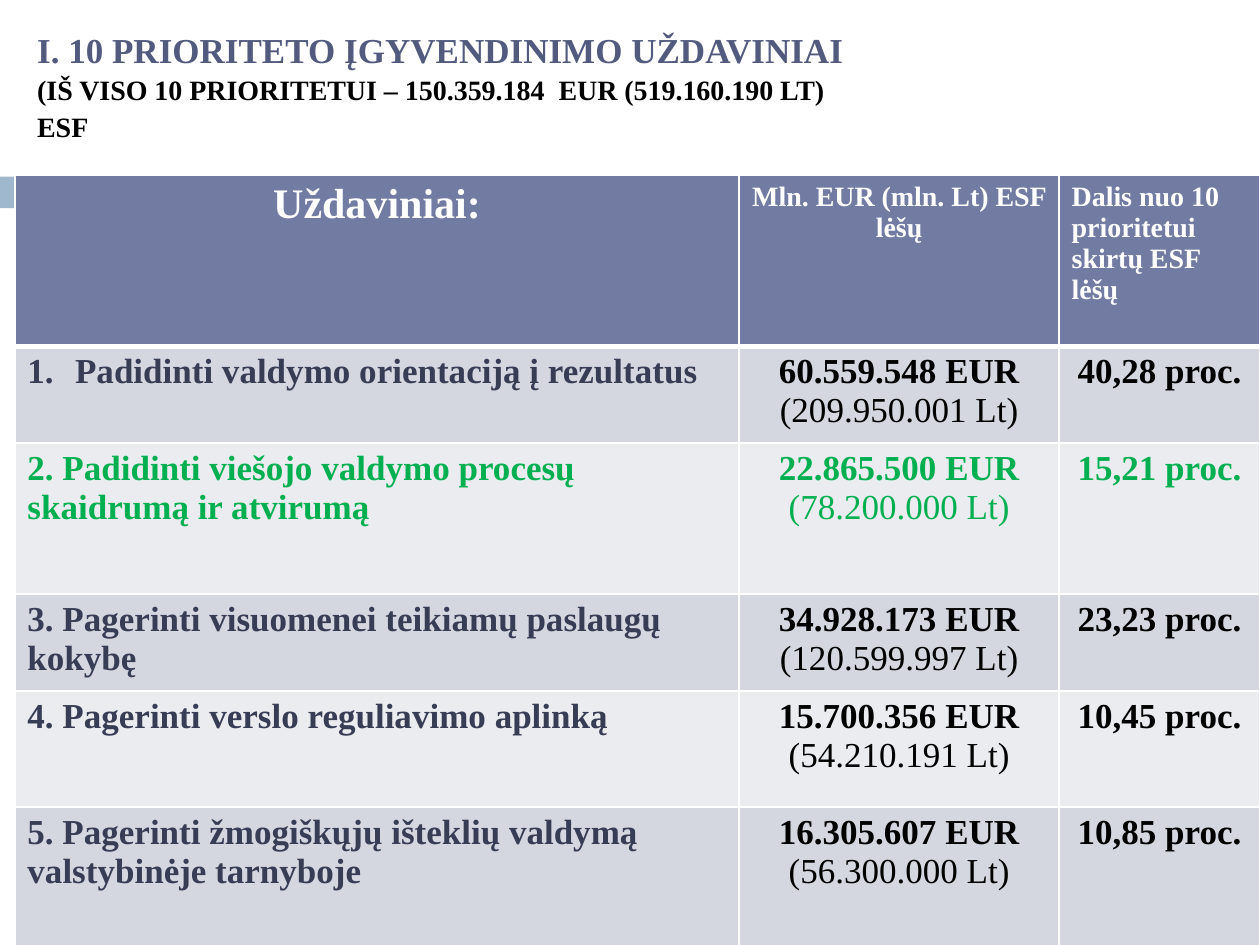
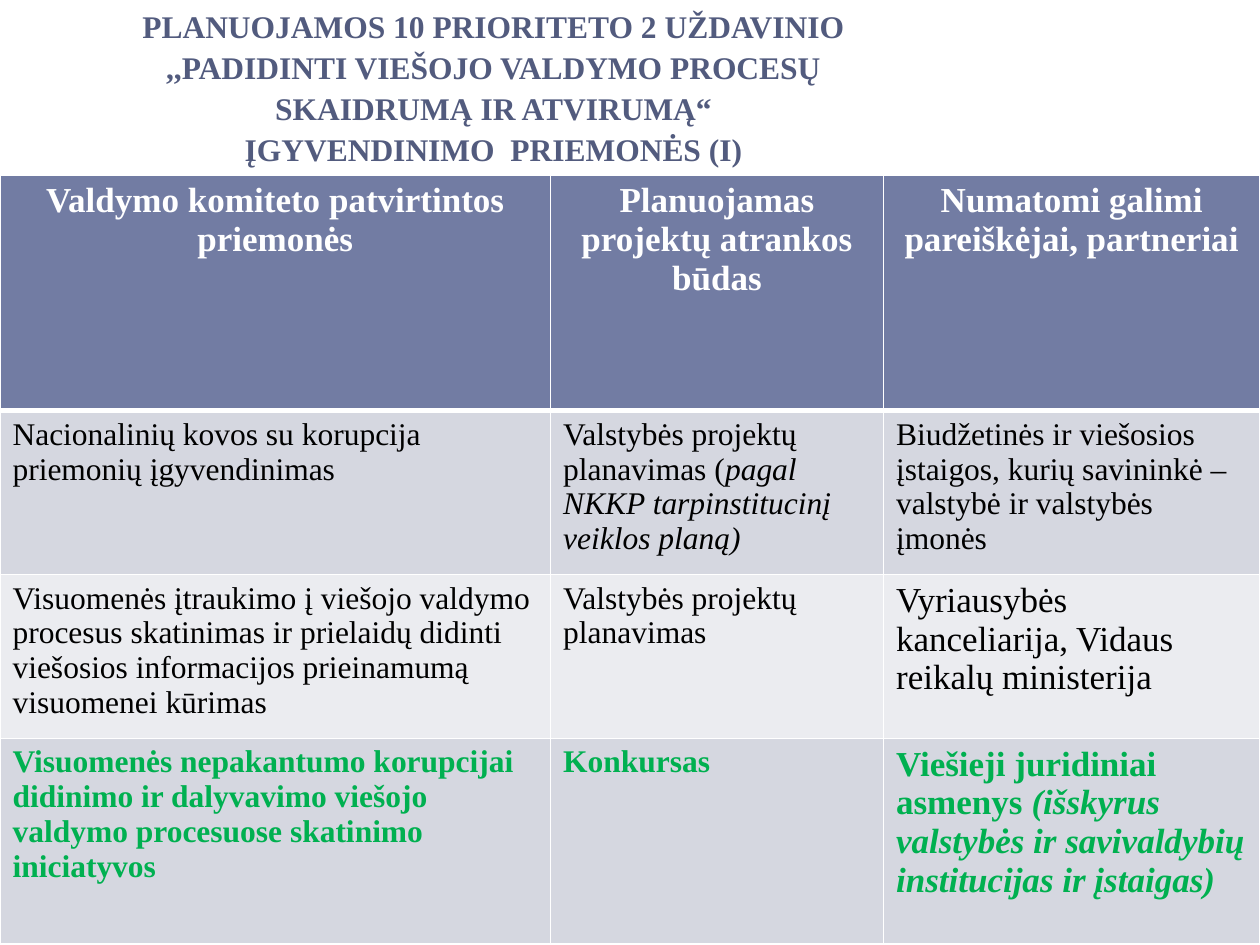
from dataclasses import dataclass

from lxml.etree import SubElement
from pptx import Presentation
from pptx.dml.color import RGBColor as RGB
from pptx.enum.shapes import MSO_SHAPE as Shape
from pptx.enum.text import MSO_ANCHOR as Anchor, PP_ALIGN as Align
from pptx.oxml.ns import qn
from pptx.util import Cm, Pt

# Content. Each table row is (cells, highlighted).
TASKS_TITLE = [
    "I. 10 PRIORITETO ĮGYVENDINIMO UŽDAVINIAI",
    "(IŠ VISO 10 PRIORITETUI – 150.359.184  EUR (519.160.190 LT)  ESF",
]
TASKS_HEADER = ["Uždaviniai:", "Mln. EUR (mln. Lt) ESF lėšų",
                "Dalis nuo 10 prioritetui skirtų ESF lėšų"]
TASKS = [
    ("Padidinti valdymo orientaciją į rezultatus",
     "60.559.548 EUR", "(209.950.001 Lt)", "40,28 proc.", False),
    ("2. Padidinti viešojo valdymo procesų skaidrumą ir atvirumą",
     "22.865.500 EUR", "(78.200.000 Lt)", "15,21 proc.", True),
    ("3. Pagerinti visuomenei teikiamų paslaugų kokybę",
     "34.928.173 EUR", "(120.599.997 Lt)", "23,23 proc.", False),
    ("4. Pagerinti verslo reguliavimo aplinką",
     "15.700.356 EUR", "(54.210.191 Lt)", "10,45 proc.", False),
    ("5. Pagerinti žmogiškųjų išteklių valdymą valstybinėje tarnyboje",
     "16.305.607 EUR", "(56.300.000 Lt)", "10,85 proc.", False),
]
MEASURES_TITLE = [
    "PLANUOJAMOS 10 PRIORITETO 2 UŽDAVINIO",
    ",,PADIDINTI VIEŠOJO VALDYMO PROCESŲ",
    "SKAIDRUMĄ IR ATVIRUMĄ“",
    "ĮGYVENDINIMO  PRIEMONĖS (I)",
]
MEASURES_HEADER = ["Valdymo komiteto patvirtintos priemonės",
                   "Planuojamas projektų atrankos būdas",
                   "Numatomi galimi pareiškėjai, partneriai"]
# measure, selection (plain, italic), applicants (plain, italic), applicant size, highlighted
MEASURES = [
    ("Nacionalinių kovos su korupcija priemonių įgyvendinimas",
     ("Valstybės projektų planavimas (", "pagal NKKP tarpinstitucinį veiklos planą)"),
     ("Biudžetinės ir viešosios įstaigos, kurių savininkė – valstybė ir valstybės įmonės",),
     18, False),
    ("Visuomenės įtraukimo į viešojo valdymo procesus skatinimas ir prielaidų didinti "
     "viešosios informacijos prieinamumą visuomenei kūrimas",
     ("Valstybės projektų planavimas",),
     ("Vyriausybės kanceliarija, Vidaus reikalų ministerija",),
     20, False),
    ("Visuomenės nepakantumo korupcijai didinimo ir dalyvavimo viešojo valdymo "
     "procesuose skatinimo iniciatyvos",
     ("Konkursas",),
     ("Viešieji juridiniai asmenys ",
      "(išskyrus valstybės ir savivaldybių institucijas ir įstaigas)"),
     20, True),
]


@dataclass(frozen=True)
class Theme:
    font: str = "Times New Roman"
    title: RGB = RGB(0x52, 0x5B, 0x7E)
    accent: RGB = RGB(0x72, 0x7C, 0xA3)
    accent_light: RGB = RGB(0x9F, 0xB8, 0xCD)
    stripes: tuple = (RGB(0xD5, 0xD7, 0xE0), RGB(0xEB, 0xEC, 0xF0))
    task: RGB = RGB(0x37, 0x3D, 0x54)
    highlight: RGB = RGB(0x00, 0xB0, 0x50)
    black: RGB = RGB(0, 0, 0)
    white: RGB = RGB(0xFF, 0xFF, 0xFF)
    large: int = 24
    heading: int = 20
    body: int = 18
    small: int = 16


THEME = Theme()
TABLE_TOP = Cm(3.53)
BAND_TOP, BAND_HEIGHT = Cm(3.56), Cm(0.64)
BANDS = [(Cm(0), Cm(1.47), THEME.accent_light), (Cm(1.65), Cm(23.75), THEME.accent)]


def style(font, size, color, bold=True):
    font.name, font.size, font.bold = THEME.font, Pt(size), bold
    font.color.rgb = color


def add_slide(deck):
    """Add a blank slide with the two-part band under the title."""
    slide = deck.slides.add_slide(deck.slide_layouts[6])
    for left, width, color in BANDS:
        band = slide.shapes.add_shape(Shape.RECTANGLE, left, BAND_TOP, width, BAND_HEIGHT)
        band.shadow.inherit = False
        band.fill.solid()
        band.fill.fore_color.rgb = color
        band.line.fill.background()
    return slide


def add_title(slide, place, align):
    """Add the title box and return its paragraph."""
    frame = slide.shapes.add_textbox(*map(Cm, place)).text_frame
    frame.word_wrap = True
    frame.vertical_anchor = Anchor.MIDDLE
    title = frame.paragraphs[0]
    title.alignment = align
    title.line_spacing = 1.08
    return title


def add_borders(cell, bottom):
    for side in "LRTB":
        width = bottom if side == "B" else 1
        line = SubElement(cell._tc.get_or_add_tcPr(), qn(f"a:ln{side}"), w=str(Pt(width)))
        fill = SubElement(line, qn("a:solidFill"))
        SubElement(fill, qn("a:srgbClr"), val=str(THEME.white))


def add_grid(slide, left, widths, heights):
    """Add a table with a solid header row and striped rows below it."""
    table = slide.shapes.add_table(len(heights), len(widths), Cm(left), TABLE_TOP,
                                   Cm(sum(widths)), Cm(sum(heights))).table
    for column, width in zip(table.columns, widths):
        column.width = Cm(width)
    for index, (row, height) in enumerate(zip(table.rows, heights)):
        row.height = Cm(height)
        for cell in row.cells:
            add_borders(cell, 1 if index else 3)
            cell.fill.solid()
            cell.fill.fore_color.rgb = THEME.stripes[(index - 1) % 2] if index else THEME.accent
    return table


def write(cell, parts, size, color, bold=True, align=Align.LEFT):
    """Fill a cell with runs that share one style; return its paragraph."""
    paragraph = cell.text_frame.paragraphs[0]
    paragraph.alignment = align
    for part in parts:
        paragraph.add_run().text = part
    style(paragraph.font, size, color, bold)
    return paragraph


def number(paragraph):
    properties = paragraph._p.get_or_add_pPr()
    properties.set("marL", str(Cm(0.96)))
    properties.set("indent", str(Cm(-0.96)))
    bullet = SubElement(properties, qn("a:buAutoNum"), type="arabicPeriod")
    properties.insert(0, bullet)


def build_tasks(deck):
    slide = add_slide(deck)
    title = add_title(slide, (0.5, 0, 17, 3.38), Align.LEFT)
    heading, total = TASKS_TITLE
    title_run = title.add_run()
    title_run.text = heading
    style(title_run.font, THEME.heading, THEME.title)
    title.add_line_break()
    total_run = title.add_run()
    total_run.text = total
    style(total_run.font, THEME.small, THEME.black)

    table = add_grid(slide, 0.3, (14.6, 6.45, 4.05), (3.45, 1.93, 3.05, 1.93, 2.34, 2.82))
    header_styles = [(THEME.large, Align.CENTER), (THEME.small, Align.CENTER),
                     (THEME.small, Align.LEFT)]
    for column, (label, (size, align)) in enumerate(zip(TASKS_HEADER, header_styles)):
        write(table.cell(0, column), [label], size, THEME.white, align=align)
    for row, (task, euros, litas, share, highlighted) in enumerate(TASKS, 1):
        task_color = THEME.highlight if highlighted else THEME.task
        color = THEME.highlight if highlighted else THEME.black
        task_text = write(table.cell(row, 0), [task], THEME.heading, task_color)
        if row == 1:
            number(task_text)
        amount = write(table.cell(row, 1), [euros + " ", litas], THEME.heading, color,
                       align=Align.CENTER)
        amount.runs[0].font.bold = True
        amount.runs[1].font.bold = False
        write(table.cell(row, 2), [share], THEME.heading, color, align=Align.CENTER)


def build_measures(deck):
    slide = add_slide(deck)
    title = add_title(slide, (0, 0.33, 19.9, 2.8), Align.CENTER)
    title.text = "\v".join(MEASURES_TITLE)
    style(title.font, THEME.body, THEME.title)

    table = add_grid(slide, 0, (11.1, 6.71, 7.59), (4.75, 3.05, 3.05, 4.14))
    for column, label in enumerate(MEASURES_HEADER):
        write(table.cell(0, column), [label], THEME.heading, THEME.white, align=Align.CENTER)
    for row, (measure, selection, applicants, size, highlighted) in enumerate(MEASURES, 1):
        color = THEME.highlight if highlighted else THEME.black
        columns = [((measure,), THEME.body), (selection, THEME.body), (applicants, size)]
        for column, (parts, part_size) in enumerate(columns):
            text = write(table.cell(row, column), parts, part_size, color, highlighted)
            for remark in text.runs[1:]:
                remark.font.italic = True


def main():
    deck = Presentation()
    deck.slide_width, deck.slide_height = Cm(25.4), Cm(19.05)
    build_tasks(deck)
    build_measures(deck)
    deck.save("out.pptx")


if __name__ == "__main__":
    main()
